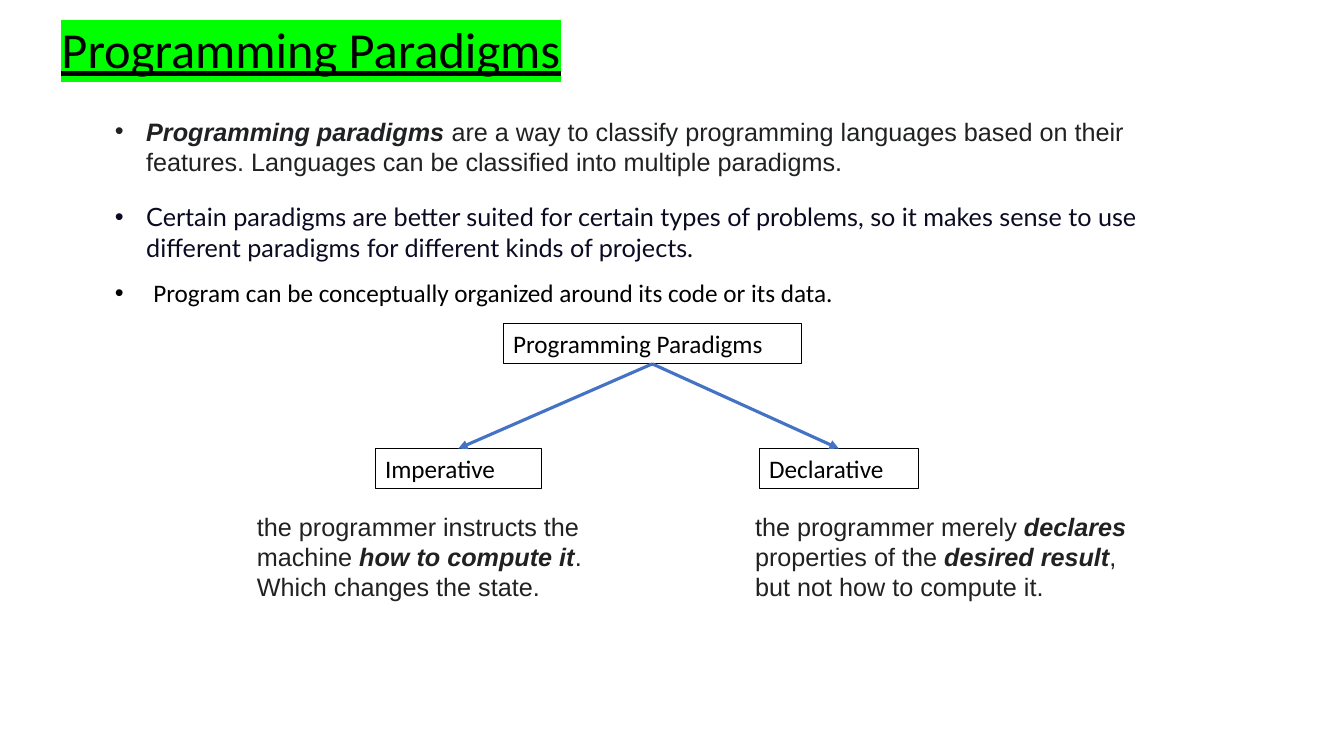
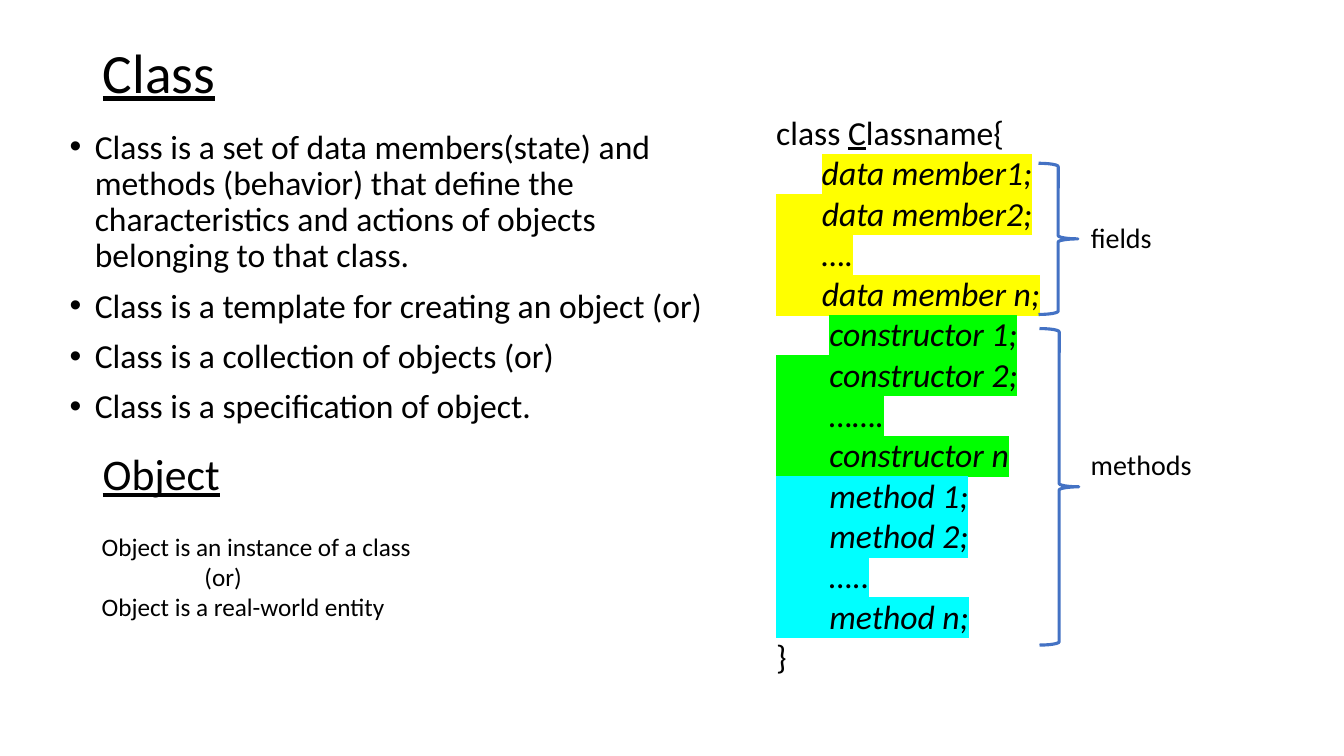
from lxml import etree
from pptx import Presentation
from pptx.dml.color import RGBColor
from pptx.enum.dml import MSO_THEME_COLOR
from pptx.enum.shapes import MSO_CONNECTOR, MSO_SHAPE
from pptx.enum.text import MSO_ANCHOR, MSO_AUTO_SIZE, PP_ALIGN
from pptx.oxml.ns import qn
from pptx.util import Pt

PX = 9144  # 100 px to the inch
BLACK = RGBColor(0x00, 0x00, 0x00)
GREY = RGBColor(0x20, 0x21, 0x22)
NAVY = RGBColor(0x0A, 0x0A, 0x23)
BLUE = RGBColor(0x44, 0x72, 0xC4)
GREEN = RGBColor(0x00, 0xFF, 0x00)
YELLOW = RGBColor(0xFF, 0xFF, 0x00)
CYAN = RGBColor(0x00, 0xFF, 0xFF)

LEFT = PP_ALIGN.LEFT
TOP, MIDDLE = MSO_ANCHOR.TOP, MSO_ANCHOR.MIDDLE
RECT, BRACE = MSO_SHAPE.RECTANGLE, MSO_SHAPE.RIGHT_BRACE
STRAIGHT = MSO_CONNECTOR.STRAIGHT
TITLE_ONLY, TITLE_BODY = 5, 1
SITE_TOP, SITE_BOTTOM = 0, 2

# Text formats: "ink" is the text colour, "mark" the highlight
PLAIN = dict(name="Calibri", size=Pt(18), ink=BLACK)
ARIAL = dict(PLAIN, name="Arial", ink=GREY)
LATO = dict(PLAIN, name="Lato", ink=NAVY)
LARGE = dict(PLAIN, size=Pt(24))
LABEL = dict(PLAIN, size=Pt(20))
HEAD = dict(PLAIN, underline=True)
STRONG = dict(bold=True, italic=True)
TIGHT = dict(line_spacing=0.9)

# A paragraph is (runs, layout); a run is (text, format)
POINTS = [
    ([("Programming paradigms ", dict(ARIAL, **STRONG)),
      ("are a way to classify programming languages based on their features. "
       "Languages can be classified into multiple paradigms.", ARIAL)],
     dict(indent=31)),
    ([("Certain paradigms are better suited for certain types of problems, so it "
       "makes sense to use different paradigms for different kinds of projects.",
       LATO)],
     dict(indent=31, space_before=Pt(18))),
    ([("Program can be conceptually organized around its code or its data.", PLAIN)],
     dict(indent=38, space_before=Pt(11))),
]
ROOT = ("Programming Paradigms", (499, 321, 296, 40))
KINDS = [
    ("Imperative", (372, 445, 165, 40), (245, 502, 371, 101), [
        ([("the programmer instructs the machine ", {}),
          ("how to compute it", STRONG), (".", {})], {}),
        ([("Which changes the state.", {})], {})]),
    ("Declarative", (753, 445, 158, 40), (739, 502, 389, 101), [
        ([("the programmer merely ", {}), ("declares", STRONG),
          (" properties of the ", {}), ("desired result", STRONG),
          (", but not how to compute it.", {})], {})]),
]

FACTS = [
    "Class is a set of data members(state) and methods (behavior) that define the "
    "characteristics and actions of objects belonging to that class.",
    "Class is a template for creating an object (or)",
    "Class is a collection of objects (or)",
    "Class is a specification of object.",
]
OBJECT = [
    ([("Object is an instance of a class", {})], {}),
    ([("(or)", {})], dict(margin=102)),
    ([("Object is a real-world entity", {})], {}),
]
# Code groups: highlight, lines, whether the first indent stays unmarked
GROUPS = [
    (YELLOW, ["      data member1;", "      data member2;", "      ….",
              "      data member n;"], True),
    (GREEN, ["       constructor 1;", "       constructor 2;", "       …….",
             "       constructor n"], True),
    (CYAN, ["       method 1;", "       method 2;", "       …..",
            "       method n;"], False),
]
BRACES = [
    ("fields", (1030, 162, 39, 150), (1072, 214, 211, 44)),
    ("methods", (1031, 326, 39, 314), (1072, 439, 150, 44)),
]


def scale(box):
    return [n * PX for n in box]


def style(run, form):
    font = run.font
    for key, val in form.items():
        if key not in ("ink", "mark"):
            setattr(font, key, val)
    font.color.rgb = form["ink"]
    if "mark" in form:
        light = etree.Element(qn("a:highlight"))
        etree.SubElement(light, qn("a:srgbClr"), val=str(form["mark"]))
        run._r.rPr.find(qn("a:solidFill")).addnext(light)


def write(frame, paras, base=PLAIN, anchor=TOP):
    frame.word_wrap = True
    frame.auto_size = MSO_AUTO_SIZE.NONE
    frame.vertical_anchor = anchor
    for i, (runs, layout) in enumerate(paras):
        para = frame.add_paragraph() if i else frame.paragraphs[0]
        para.alignment = LEFT
        para.space_before = Pt(0)
        for key, val in layout.items():
            if key == "indent":
                props = para._p.get_or_add_pPr()
                props.set("marL", str(val * PX))
                props.set("indent", str(-val * PX))
            elif key == "margin":
                para._p.get_or_add_pPr().set("marL", str(val * PX))
            else:
                setattr(para, key, val)
        for text, form in runs:
            run = para.add_run()
            run.text = text
            style(run, {**base, **form})


def single(text, **layout):
    return [([(text, {})], layout)]


def place(holder, box, paras, base=PLAIN, anchor=TOP):
    holder.left, holder.top, holder.width, holder.height = scale(box)
    write(holder.text_frame, paras, base, anchor)


def note(slide, box, paras, base=PLAIN, anchor=TOP):
    write(slide.shapes.add_textbox(*scale(box)).text_frame, paras, base, anchor)


def start(deck, layout, title, box, form):
    slide = deck.slides.add_slide(deck.slide_layouts[layout])
    place(slide.shapes.title, box, single(title, **TIGHT), form, MIDDLE)
    return slide


def outline(slide, kind, box, color, width):
    shape = slide.shapes.add_shape(kind, *scale(box))
    shape.shadow.inherit = False
    shape.fill.background()
    shape.line.color.rgb = color
    shape.line.width = Pt(width)
    return shape


def node(slide, text, box):
    shape = outline(slide, RECT, box, BLACK, 0.75)
    write(shape.text_frame, single(text))
    return shape


def arrow(slide, tail, head):
    link = slide.shapes.add_connector(STRAIGHT, 0, 0, 0, 0)
    link.begin_connect(tail, SITE_BOTTOM)
    link.end_connect(head, SITE_TOP)
    link.line.color.rgb = BLUE
    link.line.width = Pt(2.25)
    etree.SubElement(link.line._get_or_add_ln(), qn("a:tailEnd"), type="triangle")
    etree.SubElement(link._element.spPr, qn("a:effectLst"))


def code():
    """Return the class listing as paragraphs."""
    paras = [([("class ", {}), ("C", dict(underline=True)), ("lassname{", {})], {})]
    for color, lines, bare in GROUPS:
        form = dict(italic=True, mark=color)
        for i, line in enumerate(lines):
            runs = [(line, form)]
            if bare and i == 0:
                word = line.lstrip()
                runs = [(line[:-len(word)], dict(italic=color != YELLOW)),
                        (word, form)]
            paras.append((runs, {}))
    return paras + single("}")


def paradigms(deck):
    slide = start(deck, TITLE_BODY, "Programming Paradigms", (51, 23, 1150, 57),
                  dict(HEAD, size=Pt(36), mark=GREEN))
    place(slide.placeholders[1], (104, 110, 1100, 205), POINTS)
    root = node(slide, *ROOT)
    for name, box, area, paras in KINDS:
        arrow(slide, root, node(slide, name, box))
        note(slide, area, paras, ARIAL)


def classes(deck):
    slide = start(deck, TITLE_BODY, "Class", (92, 40, 1150, 69),
                  dict(HEAD, size=Pt(39.6)))
    facts = [([(text, {})], dict(TIGHT, indent=25, space_before=Pt(10 if i else 0)))
             for i, text in enumerate(FACTS)]
    place(slide.placeholders[1], (59, 124, 679, 310), facts, LARGE)
    note(slide, (760, 106, 334, 576), code(), LARGE)
    for text, box, area in BRACES:
        outline(slide, BRACE, box, BLUE, 2.25)
        note(slide, area, single(text), LABEL)
    note(slide, (92, 438, 184, 69), single("Object", **TIGHT),
         dict(HEAD, size=Pt(31.2)), MIDDLE)
    note(slide, (91, 522, 667, 101), OBJECT)


def main():
    deck = Presentation()
    deck.slide_width, deck.slide_height = scale((1333, 750))
    back = deck.slide_master.background.fill
    back.solid()
    back.fore_color.theme_color = MSO_THEME_COLOR.BACKGROUND_1
    paradigms(deck)
    classes(deck)
    deck.save("out.pptx")


if __name__ == "__main__":
    main()
